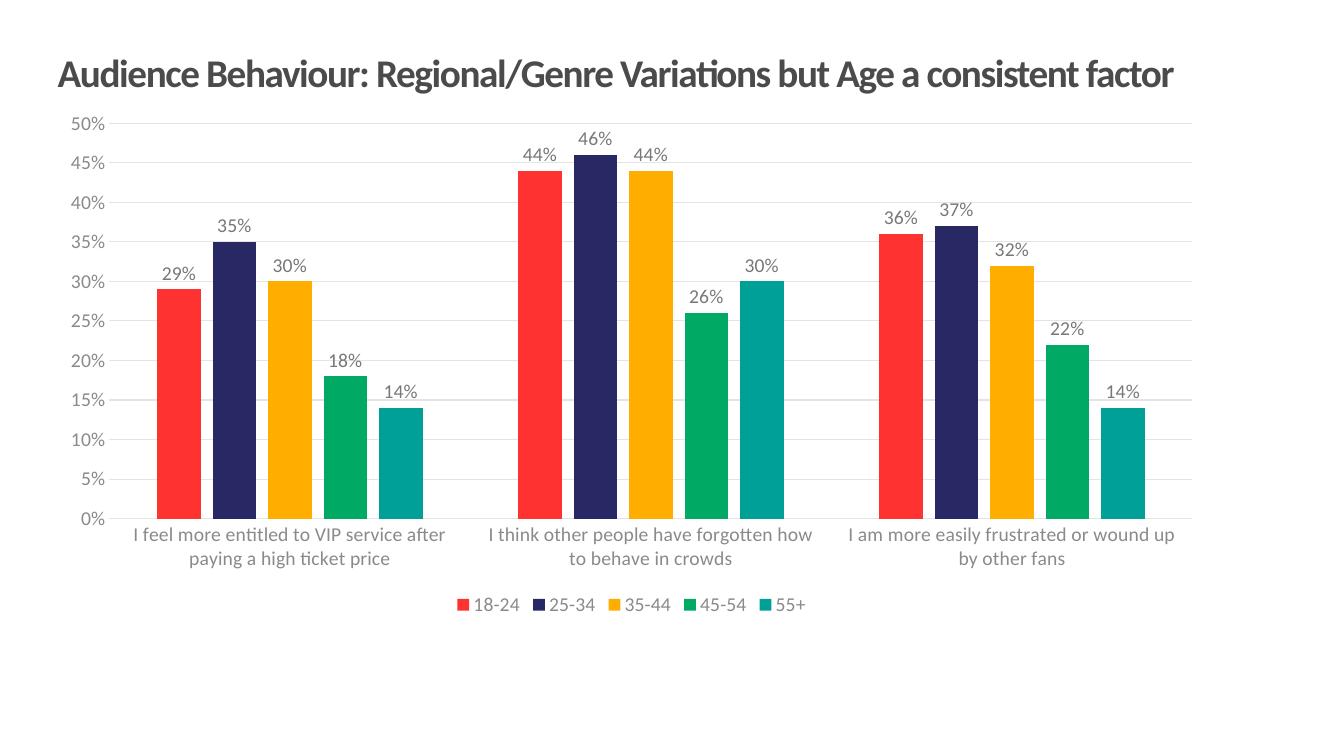
from dataclasses import dataclass

from pptx import Presentation
from pptx.chart.data import CategoryChartData
from pptx.dml.color import RGBColor as RGB
from pptx.enum.chart import XL_CHART_TYPE as ChartType
from pptx.enum.chart import XL_LABEL_POSITION as LabelPos
from pptx.enum.chart import XL_LEGEND_POSITION as LegendPos
from pptx.enum.chart import XL_TICK_MARK as Tick
from pptx.enum.text import MSO_ANCHOR as Anchor
from pptx.enum.text import MSO_AUTO_SIZE as AutoSize
from pptx.enum.text import PP_ALIGN as Align
from pptx.util import Pt


@dataclass(frozen=True)
class Theme:
    font: str = "Calibri"
    title_size: int = 28
    chart_size: int = 14
    title: str = "4B4B4B"
    axis: str = "8A8A8A"
    label: str = "787878"
    grid: str = "E4E4E4"


THEME = Theme()
TITLE = "Audience Behaviour: Regional/Genre Variations but Age a consistent factor"
STATEMENTS = (
    "I feel more entitled to VIP service after paying a high ticket price",
    "I think other people have forgotten how to behave in crowds",
    "I am more easily frustrated or wound up by other fans",
)
AGE_GROUPS = (
    ("18-24", (0.29, 0.44, 0.36), "FF3232"),
    ("25-34", (0.35, 0.46, 0.37), "282864"),
    ("35-44", (0.30, 0.44, 0.32), "FFAE00"),
    ("45-54", (0.18, 0.26, 0.22), "00AA64"),
    ("55+", (0.14, 0.30, 0.14), "00A096"),
)


def style_font(font, size, color):
    font.name = THEME.font
    font.size = Pt(size)
    font.color.rgb = RGB.from_string(color)


def style_line(line):
    line.color.rgb = RGB.from_string(THEME.grid)
    line.width = Pt(0.75)


def add_title(slide, x, y, w, h):
    sp = slide.shapes.title
    sp.left, sp.top, sp.width, sp.height = Pt(x), Pt(y), Pt(w), Pt(h)
    tf = sp.text_frame
    tf.word_wrap = True
    tf.auto_size = AutoSize.NONE
    tf.vertical_anchor = Anchor.MIDDLE
    p = tf.paragraphs[0]
    p.alignment = Align.LEFT
    r = p.add_run()
    r.text = TITLE
    style_font(r.font, THEME.title_size, THEME.title)
    r.font.bold = True
    r.font._element.set("spc", "-100")


def add_age_chart(slide, x, y, w, h):
    data = CategoryChartData(number_format="0%")
    data.categories = STATEMENTS
    for name, values, _ in AGE_GROUPS:
        data.add_series(name, values)
    chart = slide.shapes.add_chart(
        ChartType.COLUMN_CLUSTERED, Pt(x), Pt(y), Pt(w), Pt(h), data
    ).chart
    style_font(chart.font, THEME.chart_size, THEME.title)
    chart.has_title = False
    chart.has_legend = True
    chart.legend.position = LegendPos.BOTTOM
    chart.legend.include_in_layout = False
    style_font(chart.legend.font, THEME.chart_size, THEME.axis)

    for axis in (chart.category_axis, chart.value_axis):
        axis.major_tick_mark = axis.minor_tick_mark = Tick.NONE
        style_font(axis.tick_labels.font, THEME.chart_size, THEME.axis)
    style_line(chart.category_axis.format.line)
    values_axis = chart.value_axis
    values_axis.minimum_scale, values_axis.maximum_scale = 0, 0.5
    values_axis.major_unit = 0.05
    values_axis.tick_labels.number_format = "0%"
    values_axis.tick_labels.number_format_is_linked = False
    values_axis.format.line.fill.background()
    style_line(values_axis.major_gridlines.format.line)

    plot = chart.plots[0]
    plot.gap_width, plot.overlap = 219, -27
    plot.vary_by_categories = False
    for series, (_, _, color) in zip(plot.series, AGE_GROUPS):
        series.invert_if_negative = False
        series.format.fill.solid()
        series.format.fill.fore_color.rgb = RGB.from_string(color)
        labels = series.data_labels
        labels.show_value = True
        labels.position = LabelPos.OUTSIDE_END
        labels.number_format = "0%"
        labels.number_format_is_linked = False
        style_font(labels.font, THEME.chart_size, THEME.label)


def main():
    prs = Presentation()
    prs.slide_width, prs.slide_height = Pt(960), Pt(540)
    slide = prs.slides.add_slide(prs.slide_layouts[5])
    left, width = 34, 834.5
    add_title(slide, left, 31, width, 41)
    add_age_chart(slide, left, 72, width, 371.5)
    prs.save("out.pptx")


if __name__ == "__main__":
    main()
